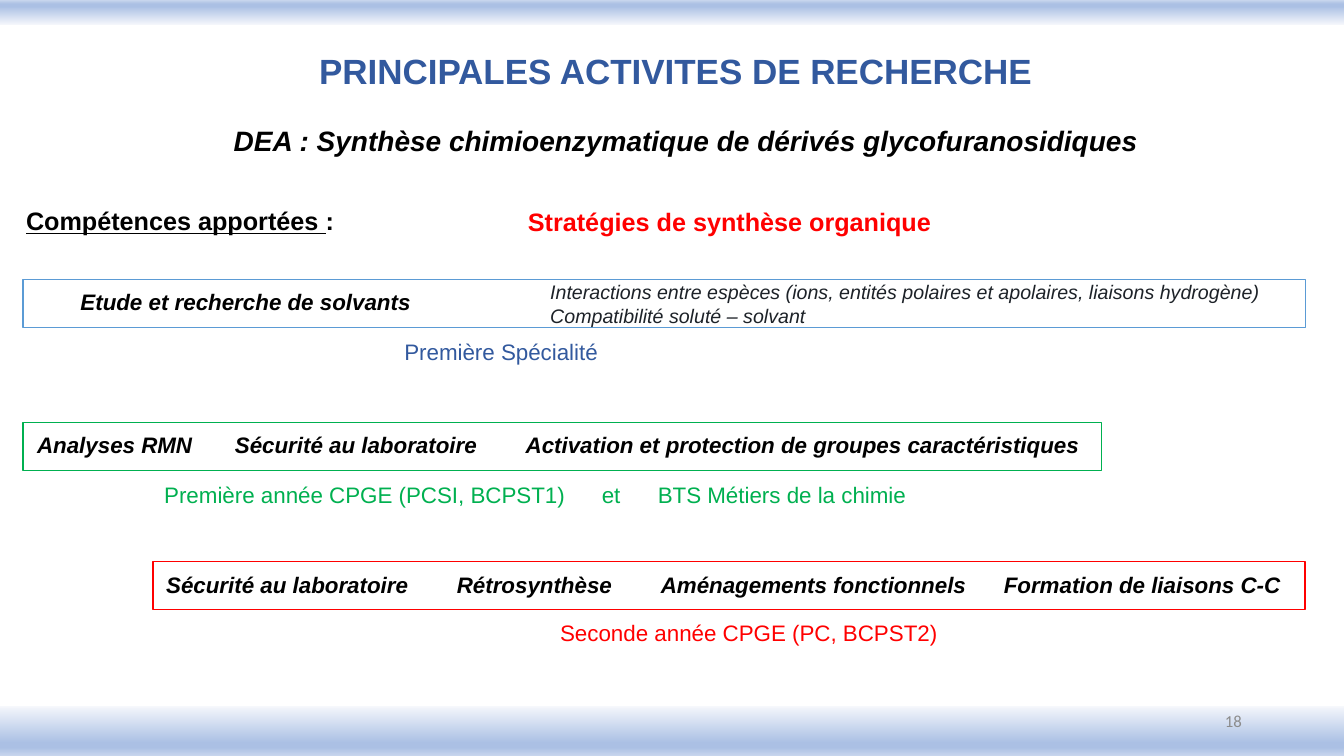
from lxml.etree import SubElement
from pptx import Presentation
from pptx.dml.color import RGBColor
from pptx.enum.shapes import MSO_SHAPE
from pptx.enum.text import MSO_ANCHOR, PP_ALIGN
from pptx.oxml.ns import qn
from pptx.util import Pt

BLACK, BLUE, GREEN, RED = "000000", "32599E", "00B050", "FF0000"
BAND_STOPS = [(0, "F6F8FC"), (74, "ABC0E4"), (83, "ABC0E4"), (100, "C7D5ED")]

deck = Presentation()
deck.slide_width, deck.slide_height = Pt(960), Pt(540)
page = deck.slides.add_slide(deck.slide_layouts[5])


def color(value):
    return RGBColor.from_string(value)


def write(text, left, top, width, height, box=None, size=16, fill=BLACK, bold=False,
          italic=False, underline=False, align=PP_ALIGN.LEFT, anchor=MSO_ANCHOR.TOP,
          font="Arial", tabs=()):
    """Fill box, or a new text box, with one line; tabs are stops in points."""
    box = box or page.shapes.add_textbox(0, 0, 0, 0)
    box.left, box.top, box.width, box.height = Pt(left), Pt(top), Pt(width), Pt(height)
    frame = box.text_frame
    frame.word_wrap = True
    frame.vertical_anchor = anchor
    para = frame.paragraphs[0]
    para.alignment = align
    if tabs:
        stops = SubElement(para._p.get_or_add_pPr(), qn("a:tabLst"))
        for stop in tabs:
            SubElement(stops, qn("a:tab"), pos=str(Pt(stop)), algn="l")
    span = para.add_run()
    span.text = text
    span.font.name, span.font.size = font, Pt(size)
    span.font.bold, span.font.italic, span.font.underline = bold, italic, underline
    span.font.color.rgb = color(fill)
    return para


# Gradient bands at the top and bottom edges
for top, height, angle in [(0, 18, 90), (504, 36, 270)]:
    band = page.shapes.add_shape(MSO_SHAPE.RECTANGLE, 0, Pt(top), Pt(960), Pt(height))
    band.shadow.inherit = False
    band.line.fill.background()
    band.fill.gradient()
    band.fill.gradient_angle = angle
    stops = band._element.spPr.find(".//" + qn("a:gsLst"))
    for stop in list(stops):
        stops.remove(stop)
    for percent, value in BAND_STOPS:
        stop = SubElement(stops, qn("a:gs"), pos=str(percent * 1000))
        SubElement(stop, qn("a:srgbClr"), val=value)

# Headings
write("PRINCIPALES ACTIVITES DE RECHERCHE", 207.4, 22.3, 550, 55.4, box=page.shapes.title,
      size=25, fill=BLUE, bold=True, align=PP_ALIGN.CENTER, anchor=MSO_ANCHOR.MIDDLE)
write("DEA : Synthèse chimioenzymatique de dérivés glycofuranosidiques", 154, 85, 672, 31.5,
      size=20, bold=True, italic=True, align=PP_ALIGN.CENTER)
skills = write("Compétences apportées ", 11.5, 143.3, 300, 29, size=18, bold=True, underline=True)
colon = skills.add_run()
colon.text = ":"
colon.font.name, colon.font.size, colon.font.bold = "Arial", Pt(18), True
colon.font.color.rgb = color(BLACK)
write("Stratégies de synthèse organique", 370, 144, 338, 29, size=18, fill=RED, bold=True)

# Outlined frames, one per teaching level
for left, top, width, outline in [(16.5, 199.5, 916, "5B9BD5"), (16.5, 301.7, 770.5, GREEN),
                                  (109.3, 401, 823, RED)]:
    frame = page.shapes.add_shape(MSO_SHAPE.RECTANGLE, Pt(left), Pt(top), Pt(width), Pt(34.6))
    frame.shadow.inherit = False
    frame.fill.background()
    frame.line.color.rgb = color(outline)
    frame.line.width = Pt(1)

# Skills inside the frames
write("Etude et recherche de solvants", 50.4, 202.3, 338, 26.6, bold=True, italic=True)
write("Interactions entre espèces (ions, entités polaires et apolaires, liaisons hydrogène) "
      "Compatibilité soluté – solvant", 385.9, 196.6, 527, 41, size=14, fill="1D2228", italic=True)
write("Analyses RMN\tSécurité au laboratoire\tActivation et protection de groupes caractéristiques",
      19.4, 304.6, 788, 26.6, bold=True, italic=True, tabs=(141.3, 349))
write("Sécurité au laboratoire\tRétrosynthèse\tAménagements fonctionnels\tFormation de liaisons C-C",
      111.6, 404.6, 826.6, 26.6, bold=True, italic=True, tabs=(207.6, 353.3, 598.3))

# Teaching levels under the frames
write("Première Spécialité", 206, 238.3, 304, 26.6, fill=BLUE, align=PP_ALIGN.CENTER)
write("Première année CPGE (PCSI, BCPST1)\tet\tBTS Métiers de la chimie",
      110.2, 339.8, 659.5, 26.6, fill=GREEN, tabs=(312.6, 352.6))
write("Seconde année CPGE (PC, BCPST2)", 393, 438.5, 304, 26.6, fill=RED)

write("18", 678.2, 500.4, 216, 28.8, size=12, fill="8C8C8C", font="Calibri",
      align=PP_ALIGN.RIGHT, anchor=MSO_ANCHOR.MIDDLE)

deck.save("out.pptx")
